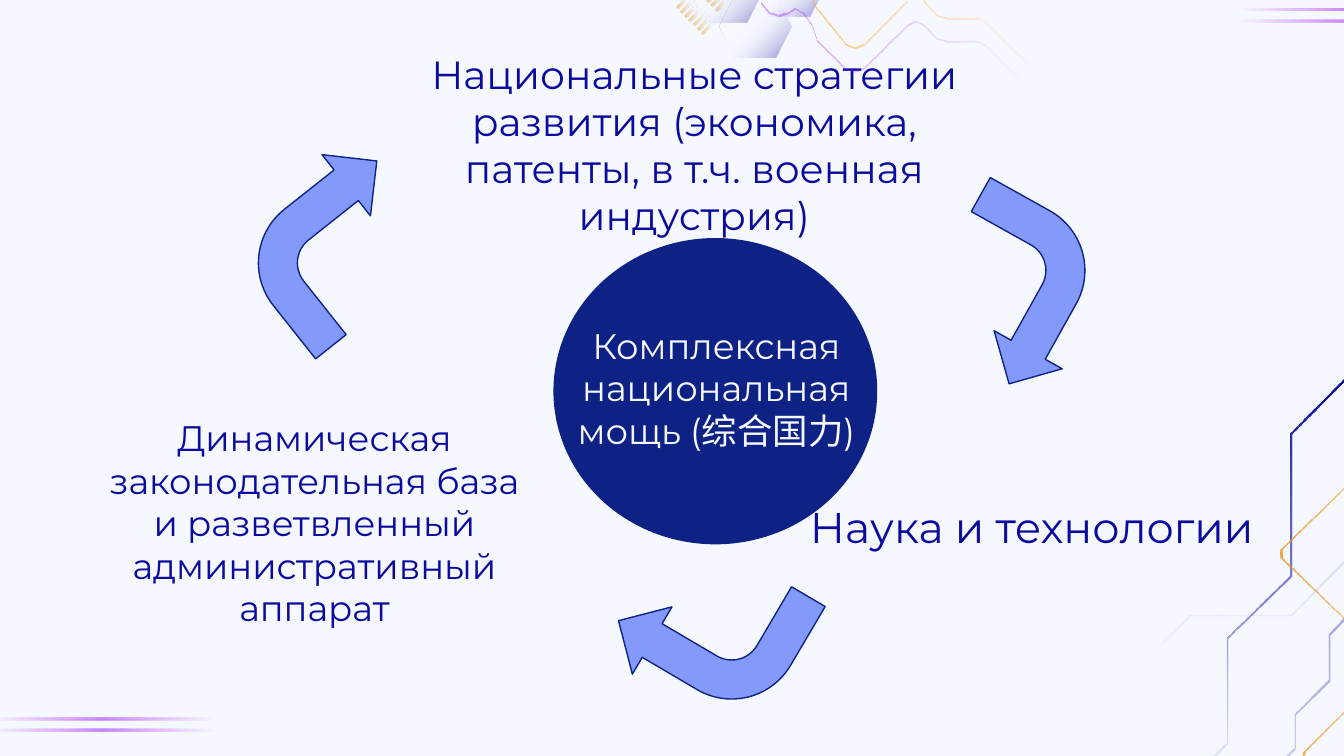
from pptx import Presentation
from pptx.dml.color import RGBColor
from pptx.enum.shapes import MSO_SHAPE
from pptx.enum.text import MSO_ANCHOR, MSO_AUTO_SIZE, PP_ALIGN
from pptx.oxml import parse_xml
from pptx.oxml.ns import nsdecls, qn
from pptx.util import Cm, Pt

OVAL, HEX, BENT, RECT = (MSO_SHAPE.OVAL, MSO_SHAPE.HEXAGON,
                         MSO_SHAPE.BENT_ARROW, MSO_SHAPE.RECTANGLE)
TOP, BOTTOM = MSO_ANCHOR.TOP, MSO_ANCHOR.BOTTOM
CENTER = PP_ALIGN.CENTER
NOFIT = MSO_AUTO_SIZE.NONE

FONT = "Montserrat"
INK = {"back": "F5F8FF", "text": "0C0A9E", "navy": "0E2184", "arrow": "839AFA",
       "amber": "EB9109", "orange": "FF9900", "violet": "9900FF", "white": "FFFFFF"}

TITLE = (["Национальные стратегии развития (экономика, патенты, в т.ч. военная индустрия)"],
         (7.85, 0.43, 10.54, 4.32), 21, "text", BOTTOM)
LABELS = [
    (["Динамическая законодательная база", "и разветвленный административный аппарат"],
     (1.27, 6.53, 9.35, 5.61), 19, "text", BOTTOM),
    (["Комплексная", "национальная", "мощь (综合国力)"],
     (8.69, 5.87, 9.7, 4.19), 19, "back", TOP),
    (["Наука и технологии"], (14.83, 8.56, 9.35, 2.13), 23, "text", BOTTOM),
]
CORE = (10.46, 4.5, 6.12, 5.79)
ARROWS = [(17.6, 4.01, 119.2), (11.84, 10.44, 210.5), (4.7, 3.15, 321.6)]

GLOW = [(0, "white", 47), (50, "violet", 47), (100, "white", 47)]
BARS = [(-0.28, 13.57), (-0.28, 13.78), (23.34, 0.16), (23.34, 0.37)]
FACET = [(0, "back", 100), (22, "back", 100), (45, "white", 0), (100, "text", 50)]
HEXES = [(13.61, -0.08), (13.06, -0.74), (14.25, -0.86)]
TICKS = [(13.36, -0.2, 3), (12.78, -0.08, 7)]
DASH = [(0, "amber", 47), (78, "back", 47), (100, "back", 47)]

SLANT, SIDE, DOWN = (0.03, 0.03), (0.04, 0), (0, 0.04)
TRACES = [
    ([(25.4, 7.15), (24.38, 8.18), (24.38, 10.87), (23.19, 12.04),
      (23.19, 14.02), (22.92, 14.29)], SLANT, [(0, "text", 100), (100, "text", 8)], 90),
    ([(25.4, 11.68), (25.1, 11.99), (25.1, 12.85), (24.46, 13.49),
      (24.46, 14.12), (24.29, 14.29)], SLANT, [(0, "text", 35), (100, "text", 18)], 90),
    ([(25.4, 10.59), (24.38, 11.61), (22.48, 11.61), (21.79, 12.32)],
     SLANT, [(0, "text", 12), (100, "text", 0)], 90),
    ([(25.4, 9.2), (24.2, 10.39), (24.2, 10.54), (25.4, 11.71)],
     SIDE, [(0, "amber", 75), (100, "amber", 45)], 0),
    ([(25.4, 13.44), (24.64, 14.2), (24.61, 14.29)],
     SIDE, [(0, "amber", 65), (100, "amber", 45)], 0),
    ([(15.37, 0), (15.4, 0.1), (15.98, 0.81), (16.15, 0.88), (16.33, 0.81),
      (17.15, 0)], DOWN, [(0, "orange", 50), (100, "orange", 25)], 0),
    ([(17.45, 0), (17.7, 0.28), (17.88, 0.33), (18.49, 0.33), (18.62, 0.41),
      (19.43, 1.19)], DOWN, [(0, "orange", 25), (100, "orange", 5)], 0),
    ([(14.4, 0.05), (14.55, 0.23), (14.73, 0.28), (14.91, 0.23), (15.04, 0.15),
      (15.19, 0.23), (15.37, 0.48), (15.44, 0.74), (15.98, 1.27), (16.15, 1.32),
      (16.33, 1.27), (17.15, 0.46), (17.3, 0.38), (17.45, 0.46), (17.7, 0.71),
      (17.88, 0.76), (18.47, 0.76), (18.62, 0.84), (19.43, 1.65)],
     DOWN, [(0, "violet", 36), (100, "violet", 0)], 0),
]


def tint(name):
    return RGBColor.from_string(INK[name])


def paint(shape, fill, line=None):
    shape.shadow.inherit = False
    shape.fill.solid()
    shape.fill.fore_color.rgb = tint(fill)
    if line:
        shape.line.color.rgb = tint(line)
        shape.line.width = Pt(0.75)
    else:
        shape.line.fill.background()


def blend(shape, stops, angle):
    paint(shape, "white")
    marks = "".join(
        f'<a:gs pos="{pos * 1000}"><a:srgbClr val="{INK[name]}">'
        f'<a:alpha val="{alpha * 1000}"/></a:srgbClr></a:gs>'
        for pos, name, alpha in stops)
    props = shape.fill._xPr
    props.replace(props.find(qn("a:solidFill")), parse_xml(
        f'<a:gradFill {nsdecls("a")} rotWithShape="1"><a:gsLst>{marks}</a:gsLst>'
        f'<a:lin ang="{angle * 60000}" scaled="0"/></a:gradFill>'))


def place(kind, left, top, width, height):
    return shapes.add_shape(kind, Cm(left), Cm(top), Cm(width), Cm(height))


def band(points, shift, stops, angle):
    far = [(x + shift[0], y + shift[1]) for x, y in reversed(points)]
    ring = [(Cm(x), Cm(y)) for x, y in points + far]
    pen = shapes.build_freeform(*ring[0])
    pen.add_line_segments(ring[1:], close=True)
    blend(pen.convert_to_shape(), stops, angle)


def write(box, lines, area, size, color, anchor):
    box.left, box.top, box.width, box.height = map(Cm, area)
    frame = box.text_frame
    frame.word_wrap = True
    frame.auto_size = NOFIT
    frame.vertical_anchor = anchor
    frame.margin_left = frame.margin_right = Cm(0.25)
    frame.margin_top = frame.margin_bottom = Cm(0.25)
    frame.text = "\n".join(lines)
    for para in frame.paragraphs:
        para.alignment = CENTER
        para.font.name = FONT
        para.font.size = Pt(size)
        para.font.color.rgb = tint(color)


deck = Presentation()
deck.slide_width, deck.slide_height = Cm(25.4), Cm(14.29)
slide = deck.slides.add_slide(deck.slide_layouts[5])
slide.background.fill.solid()
slide.background.fill.fore_color.rgb = tint("back")
shapes = slide.shapes

for left, top in BARS:
    blend(place(RECT, left, top, 4.42, 0.05), GLOW, 0)
for left, top in HEXES:
    blend(place(HEX, left, top, 1.35, 1.17), FACET, 45)
for trace in TRACES:
    band(*trace)
for left, top, count in TICKS:
    for step in range(count):
        x, y = left + 0.08 * step, top + 0.08 * step
        band([(x + 0.21, y), (x, y + 0.21)], (0.04, 0.04), DASH, 0)

paint(place(OVAL, *CORE), "navy")
write(shapes.title, *TITLE)
for label in LABELS:
    write(shapes.add_textbox(0, 0, 0, 0), *label)
for left, top, turn in ARROWS:
    arrow = place(BENT, left, top, 3.23, 2.95)
    arrow.rotation = turn
    paint(arrow, "arrow", "navy")

deck.save("out.pptx")
